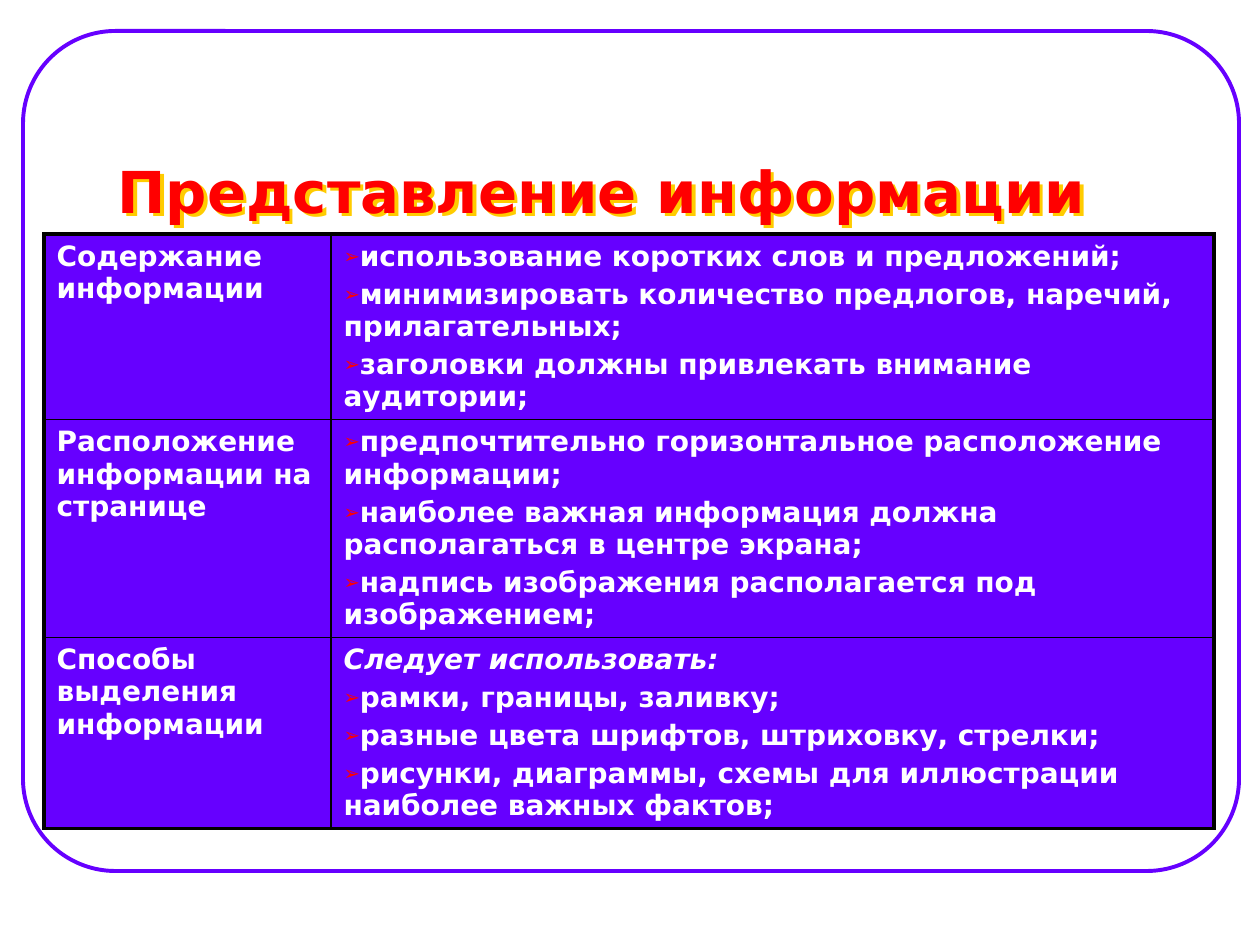
import lxml.etree
import pptx
import pptx.dml.color
import pptx.enum.shapes
import pptx.enum.text
import pptx.oxml
import pptx.oxml.ns
import pptx.util

PX = 914400 / 126  # EMU in one px
THEME = {
    "font": "DejaVu Sans",
    "violet": "6600FF", "red": "FF0000", "gold": "FFCC00",
    "white": "FFFFFF", "black": "000000",
    "title_size": 33, "cell_size": 16,
    "frame_line": 2.25, "rule_line": 3, "outer_border": 2.25, "inner_border": 1,
}
NS = pptx.oxml.ns.nsdecls("a")
rgb = pptx.dml.color.RGBColor.from_string


def px(*lengths):
    return [pptx.util.Emu(round(length * PX)) for length in lengths]


def style_font(run, color, size, **extra):
    values = {"name": THEME["font"], "size": pptx.util.Pt(size), "bold": True, **extra}
    for key, value in values.items():
        setattr(run.font, key, value)
    run.font.color.rgb = rgb(color)


deck = pptx.Presentation()
deck.slide_width, deck.slide_height = px(1260, 945)
slide = deck.slides.add_slide(deck.slide_layouts[5])

# Rounded frame
frame = slide.shapes.add_shape(
    pptx.enum.shapes.MSO_SHAPE.ROUNDED_RECTANGLE, *px(23, 31, 1216, 840))
frame.adjustments[0] = 0.11
frame.shadow.inherit = False
frame.fill.background()
frame.line.color.rgb = rgb(THEME["violet"])
frame.line.width = pptx.util.Pt(THEME["frame_line"])

# Rule under the title
rule = slide.shapes.add_connector(
    pptx.enum.shapes.MSO_CONNECTOR.STRAIGHT, *px(105, 235, 1166, 235))
rule.line.color.rgb = rgb(THEME["violet"])
rule.line.width = pptx.util.Pt(THEME["rule_line"])
lxml.etree.SubElement(rule._element.spPr, pptx.oxml.ns.qn("a:effectLst"))

# Title with a gold shadow, in front of the frame
title = slide.shapes.title
slide.shapes._spTree.append(title._element)
title.left, title.top, title.width, title.height = px(105, 73, 1061, 158)
title.text_frame.text = "Представление информации"
title_format = {
    "auto_size": pptx.enum.text.MSO_AUTO_SIZE.NONE,
    "vertical_anchor": pptx.enum.text.MSO_ANCHOR.BOTTOM,
    "word_wrap": True,
}
for key, value in title_format.items():
    setattr(title.text_frame, key, value)
heading = title.text_frame.paragraphs[0]
heading.alignment = pptx.enum.text.PP_ALIGN.LEFT
style_font(heading.runs[0], THEME["red"], THEME["title_size"])
title._element.spPr.append(pptx.oxml.parse_xml(
    f'<a:effectLst {NS}><a:outerShdw dist="35921" dir="2700000" algn="ctr" rotWithShape="0">'
    f'<a:srgbClr val="{THEME["gold"]}"/></a:outerShdw></a:effectLst>'))

# Table content: topic, lead-in, bulleted advice
topics = [
    ("Содержание информации", None, [
        "использование коротких слов и предложений;",
        "минимизировать количество предлогов, наречий, прилагательных;",
        "заголовки должны привлекать внимание аудитории;"]),
    ("Расположение информации на странице", None, [
        "предпочтительно горизонтальное расположение информации;",
        "наиболее важная информация должна располагаться в центре экрана;",
        "надпись изображения располагается под изображением;"]),
    ("Способы выделения информации", "Следует использовать:", [
        "рамки, границы, заливку;",
        "разные цвета шрифтов, штриховку, стрелки;",
        "рисунки, диаграммы, схемы для иллюстрации наиболее важных фактов;"]),
]
column_widths = px(287, 883)
row_heights = px(164, 185, 185)
advice_table = slide.shapes.add_table(
    len(row_heights), len(column_widths), *px(44, 234),
    sum(column_widths), sum(row_heights)).table
advice_table.first_row = advice_table.horz_banding = False
for column, width in zip(advice_table.columns, column_widths):
    column.width = width
for row, height in zip(advice_table.rows, row_heights):
    row.height = height

space_before = f'<a:spcBef {NS}><a:spcPct val="20000"/></a:spcBef>'
bullet = [
    f'<a:buClr {NS}><a:srgbClr val="{THEME["red"]}"/></a:buClr>',
    f'<a:buSzPct {NS} val="70000"/>',
    f'<a:buFont {NS} typeface="{THEME["font"]}"/>',
    f'<a:buChar {NS} char="➢"/>',
]
last_row, last_column = len(row_heights) - 1, len(column_widths) - 1

for row_index, (topic, lead_in, advice) in enumerate(topics):
    # Each line is (text, bulleted, italic)
    advice_lines = [(lead_in, False, True)] if lead_in else []
    advice_lines += [(text, True, False) for text in advice]
    for column_index, lines in enumerate([[(topic, False, False)], advice_lines]):
        cell = advice_table.cell(row_index, column_index)

        # Heavy borders outside, thin ones inside
        outer_sides = {
            "L": column_index == 0, "R": column_index == last_column,
            "T": row_index == 0, "B": row_index == last_row,
        }
        cell_properties = cell._tc.get_or_add_tcPr()
        for side, is_outer in outer_sides.items():
            weight = pptx.util.Pt(THEME["outer_border" if is_outer else "inner_border"])
            cell_properties.append(pptx.oxml.parse_xml(
                f'<a:ln{side} {NS} w="{weight}"><a:solidFill>'
                f'<a:srgbClr val="{THEME["black"]}"/></a:solidFill></a:ln{side}>'))
        cell.fill.solid()
        cell.fill.fore_color.rgb = rgb(THEME["violet"])

        # Cell text
        for line_index, (text, bulleted, italic) in enumerate(lines):
            body = cell.text_frame
            paragraph = body.paragraphs[0] if line_index == 0 else body.add_paragraph()
            run = paragraph.add_run()
            run.text = text
            style_font(run, THEME["white"], THEME["cell_size"], italic=italic)
            paragraph_properties = paragraph._p.get_or_add_pPr()
            for key in ("marL", "indent"):
                paragraph_properties.set(key, "0")
            for part in [space_before] + (bullet if bulleted else []):
                paragraph_properties.append(pptx.oxml.parse_xml(part))

deck.save("out.pptx")
